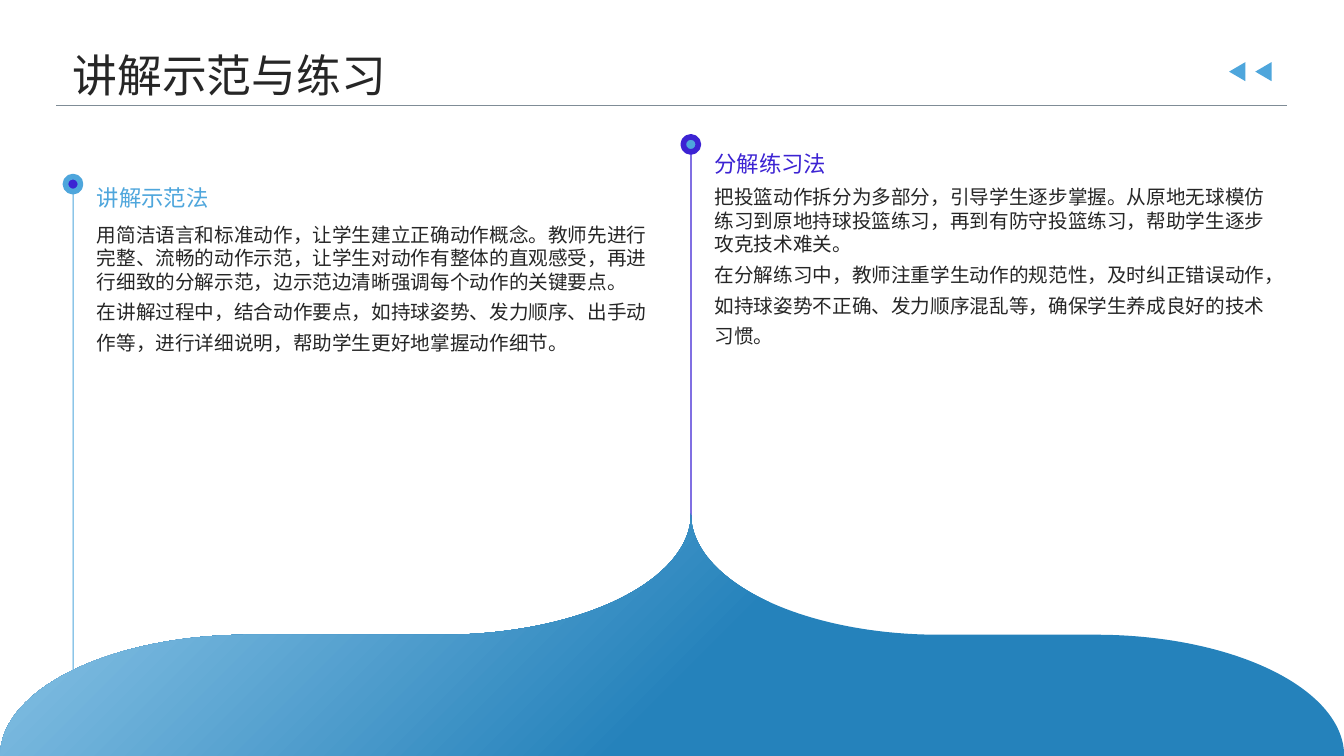
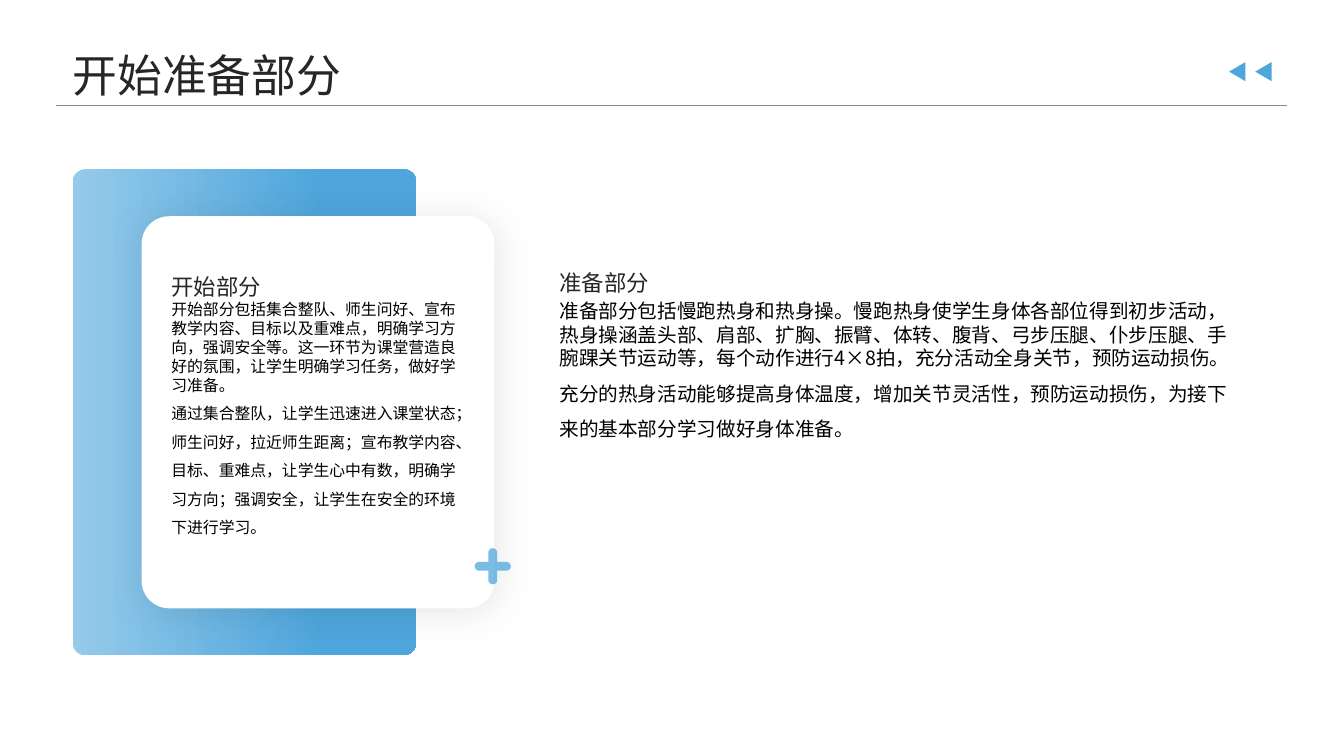
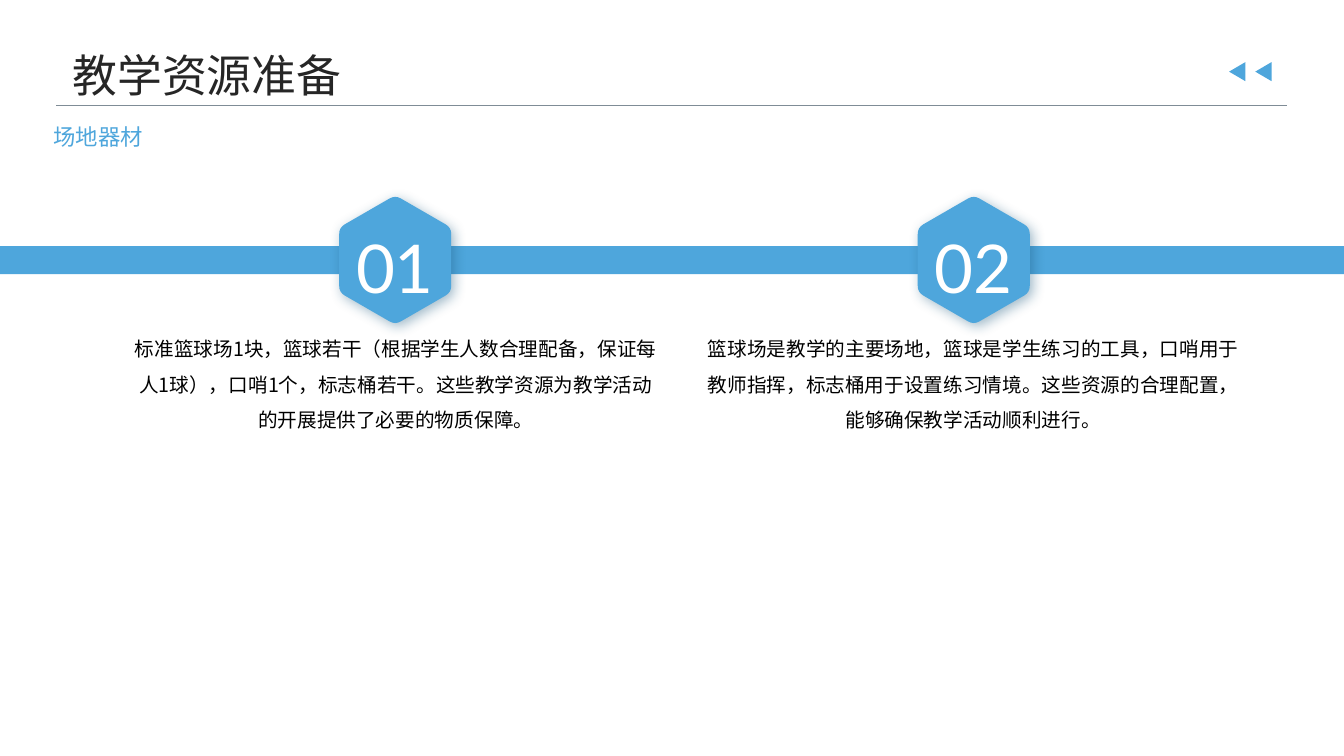
import math
from pptx import Presentation
from pptx import oxml
from pptx import util as u
from pptx.dml.color import RGBColor
from pptx.enum import shapes, text
from pptx.oxml import ns

Cm = u.Cm
SHAPE = shapes.MSO_SHAPE
ANCHOR = text.MSO_ANCHOR
W, H = 33.87, 19.05
COLORS = {
    "blue": "4EA6DC", "pale": "95CAEA", "deep": "2582BB", "violet": "3C23D3",
    "ink": "262626", "black": "000000", "white": "FFFFFF", "navy": "19567C",
    "rule": "7F8C96",
}


def rgb(name):
    return RGBColor.from_string(COLORS[name])


def element(xml):
    return oxml.parse_xml(xml.replace(">", f" {ns.nsdecls('a')}>", 1))


def color_xml(name, alpha=100):
    return (f'<a:srgbClr val="{COLORS[name]}">'
            f'<a:alpha val="{alpha * 1000}"/></a:srgbClr>')


def hexagon(cx, cy, radius=1.63, cut=0.1):
    corners = [(cx + radius * math.sin(math.radians(a)),
                cy - radius * math.cos(math.radians(a)))
               for a in range(0, 360, 60)]
    points = []
    for i, (x, y) in enumerate(corners):
        x0, y0 = corners[i - 1]
        x1, y1 = corners[(i + 1) % 6]
        for t in (0, 0.25, 0.5, 0.75, 1):
            a, b = cut * (1 - t) ** 2, cut * t ** 2
            points.append((x + a * (x0 - x) + b * (x1 - x),
                           y + a * (y0 - y) + b * (y1 - y)))
    return points


def plus(cx, cy, size=0.91, bar=0.22):
    r = bar / 2
    reach = size / 2 - r
    points = []
    for turn in range(4):
        a = turn * math.pi / 2
        arm = [(reach + r * math.cos(math.radians(d)),
                r * math.sin(math.radians(d))) for d in range(-90, 91, 15)]
        for x, y in arm + [(r, r)]:
            points.append((cx + x * math.cos(a) - y * math.sin(a),
                           cy + x * math.sin(a) + y * math.cos(a)))
    return points


class Deck:
    cjk, latin = "Noto Sans CJK SC", "Lato"

    def __init__(self):
        self.prs = Presentation()
        self.prs.slide_width, self.prs.slide_height = Cm(W), Cm(H)
        self.s = None

    def slide(self, title):
        self.s = self.prs.slides.add_slide(self.prs.slide_layouts[6])
        self.text(title, 1.83, 1.17, 30.18, 1.3, 32, anchor=ANCHOR.MIDDLE)
        for x in (30.94, 31.6):
            self.shape(SHAPE.ISOSCELES_TRIANGLE, x, 1.6, 0.48, 0.41).rotation = 270
        self.rule(1.42, 32.44, 2.67)

    def rule(self, x0, x1, y):
        cn = self.s.shapes.add_connector(
            shapes.MSO_CONNECTOR.STRAIGHT, Cm(x0), Cm(y), Cm(x1), Cm(y))
        cn.line.color.rgb = rgb("rule")
        cn.line.width = u.Pt(0.75)
        cn._element.spPr.append(element("<a:effectLst></a:effectLst>"))

    def style(self, sp, fill):
        sp.fill.solid()
        sp.fill.fore_color.rgb = rgb(fill)
        sp.line.fill.background()
        sp.shadow.inherit = False
        return sp

    def shape(self, kind, x, y, w, h, fill="blue", adj=()):
        sp = self.s.shapes.add_shape(kind, Cm(x), Cm(y), Cm(w), Cm(h))
        for i, value in enumerate(adj):
            sp.adjustments[i] = value
        return self.style(sp, fill)

    def outline(self, points, fill="blue"):
        pts = [(Cm(x), Cm(y)) for x, y in points]
        fb = self.s.shapes.build_freeform(*pts[0], scale=1.0)
        fb.add_line_segments(pts[1:], close=True)
        return self.style(fb.convert_to_shape(), fill)

    def gradient(self, sp, start, end, stop, direction):
        old = sp._element.spPr.find(ns.qn("a:solidFill"))
        stops = "".join(f'<a:gs pos="{pos * 1000}">{color_xml(c)}</a:gs>'
                        for pos, c in ((0, start), (stop, end), (100, end)))
        new = element(f'<a:gradFill rotWithShape="1"><a:gsLst>{stops}</a:gsLst>'
                      f'{direction}</a:gradFill>')
        old.getparent().replace(old, new)

    def shadow(self, sp, color, alpha, blur):
        effects = sp._element.spPr.find(ns.qn("a:effectLst"))
        effects.append(element(
            f'<a:outerShdw blurRad="{u.Pt(blur)}" dist="{u.Pt(3)}" dir="2700000" '
            f'algn="ctr" rotWithShape="0">{color_xml(color, alpha)}</a:outerShdw>'))

    def opacity(self, sp, percent):
        clr = sp._element.spPr.find(ns.qn("a:solidFill"))[0]
        clr.append(element(f'<a:alpha val="{percent * 1000}"></a:alpha>'))

    def text(self, content, x, y, w, h, size, color="ink", spacing=1.1,
             anchor=ANCHOR.TOP, align=text.PP_ALIGN.LEFT, font=cjk):
        tf = self.s.shapes.add_textbox(Cm(x), Cm(y), Cm(w), Cm(h)).text_frame
        tf.word_wrap = True
        tf.vertical_anchor = anchor
        tf.margin_left = tf.margin_right = tf.margin_top = tf.margin_bottom = 0
        tf.text = content
        for p in tf.paragraphs:
            p.alignment = align
            p.line_spacing = 1.0
            for r in p.runs:
                r.font.size = u.Pt(size)
                r.font.name = font
                r.font.color.rgb = rgb(color)
                rpr = r.font._element
                rpr.set("lang", "zh-CN")
                rpr.append(element(f'<a:ea typeface="{self.latin}"></a:ea>'))
        tf.paragraphs[-1].line_spacing = spacing

    def method(self, x, stem, dot, head, body, color, core, title, content):
        self.shape(SHAPE.RECTANGLE, x, stem[0], 0.03, stem[1], color)
        sp = self.shape(SHAPE.OVAL, x - 0.18, dot, 0.38, 0.38, core)
        sp.line.color.rgb = rgb(color)
        sp.line.width = u.Pt(4)
        self.text(title, x + 0.61, head, 13.92, 1.73, 16, color,
                  anchor=ANCHOR.BOTTOM)
        self.text(content, x + 0.61, body, 13.92, 9.2, 14, spacing=1.3)

    def resource(self, number, cx, x, content):
        self.shadow(self.outline(hexagon(cx, 6.55)), "navy", 40, 9)
        center = text.PP_ALIGN.CENTER
        self.text(number, cx - 1.63, 5.51, 3.25, 2.06, 48, "white",
                  align=center, font=self.latin)
        self.text(content, x, 8.2, 13.39, 8.84, 14, "black", 1.5, align=center)


def teaching_methods(d):
    d.slide("讲解示范与练习")
    d.method(1.83, (4.67, 12.4), 4.45, 3.58, 5.61, "blue", "violet", "讲解示范法",
             "用简洁语言和标准动作，让学生建立正确动作概念。教师先进行完整、流畅的动作示范，"
             "让学生对动作有整体的直观感受，再进行细致的分解示范，边示范边清晰强调每个动作的关键要点。\n"
             "在讲解过程中，结合动作要点，如持球姿势、发力顺序、出手动作等，进行详细说明，"
             "帮助学生更好地掌握动作细节。")
    d.method(17.4, (3.56, 11.81), 3.45, 2.72, 4.67, "violet", "blue", "分解练习法",
             "把投篮动作拆分为多部分，引导学生逐步掌握。从原地无球模仿练习到原地持球投篮练习，"
             "再到有防守投篮练习，帮助学生逐步攻克技术难关。\n"
             "在分解练习中，教师注重学生动作的规范性，及时纠正错误动作，如持球姿势不正确、"
             "发力顺序混乱等，确保学生养成良好的技术习惯。")
    brace = d.shape(SHAPE.LEFT_BRACE, 13.89, -0.94, 6.1, W, adj=(1.025, 0.514))
    brace.rotation = 270
    brace._element.spPr.xfrm.set("flipH", "1")
    d.gradient(brace, "pale", "deep", 54,
               '<a:path path="circle"><a:fillToRect r="100000" b="100000"/></a:path>')


def opening(d):
    d.slide("开始准备部分")
    panel = d.shape(SHAPE.ROUNDED_RECTANGLE, 1.83, 4.27, 8.66, 12.24, adj=(0.036,))
    d.gradient(panel, "pale", "blue", 73, '<a:lin ang="0" scaled="0"/>')
    card = d.shape(SHAPE.ROUNDED_RECTANGLE, 3.57, 5.45, 8.89, 9.88, "white", (0.078,))
    d.shadow(card, "black", 10, 28)
    d.text("开始部分", 4.32, 5.84, 7.39, 1.73, 16, spacing=1.5, anchor=ANCHOR.BOTTOM)
    d.text("开始部分包括集合整队、师生问好、宣布教学内容、目标以及重难点，明确学习方向，强调安全等。"
           "这一环节为课堂营造良好的氛围，让学生明确学习任务，做好学习准备。\n"
           "通过集合整队，让学生迅速进入课堂状态；师生问好，拉近师生距离；宣布教学内容、目标、重难点，"
           "让学生心中有数，明确学习方向；强调安全，让学生在安全的环境下进行学习。",
           4.32, 7.54, 7.39, 6.71, 11.3, "black", 1.5)
    d.opacity(d.outline(plus(12.42, 14.27)), 75)
    d.text("准备部分", 14.1, 6.6, 17.15, 0.69, 16, spacing=1.5, anchor=ANCHOR.MIDDLE)
    d.text("准备部分包括慢跑热身和热身操。慢跑热身使学生身体各部位得到初步活动，热身操涵盖头部、肩部、"
           "扩胸、振臂、体转、腹背、弓步压腿、仆步压腿、手腕踝关节运动等，每个动作进行4×8拍，"
           "充分活动全身关节，预防运动损伤。\n"
           "充分的热身活动能够提高身体温度，增加关节灵活性，预防运动损伤，为接下来的基本部分学习做好身体准备。",
           14.1, 7.54, 17.15, 8.53, 14, "black", 1.5)


def resources(d):
    d.slide("教学资源准备")
    d.text("场地器材", 1.35, 2.51, 15.72, 1.8, 16, "blue", anchor=ANCHOR.MIDDLE)
    d.shape(SHAPE.RECTANGLE, 0, 6.2, W, 0.71)
    d.resource("01", 9.96, 3.28,
               "标准篮球场1块，篮球若干（根据学生人数合理配备，保证每人1球），口哨1个，标志桶若干。"
               "这些教学资源为教学活动的开展提供了必要的物质保障。")
    d.resource("02", 24.54, 17.83,
               "篮球场是教学的主要场地，篮球是学生练习的工具，口哨用于教师指挥，标志桶用于设置练习情境。"
               "这些资源的合理配置，能够确保教学活动顺利进行。")


def main():
    d = Deck()
    teaching_methods(d)
    opening(d)
    resources(d)
    d.prs.save("out.pptx")


if __name__ == "__main__":
    main()
